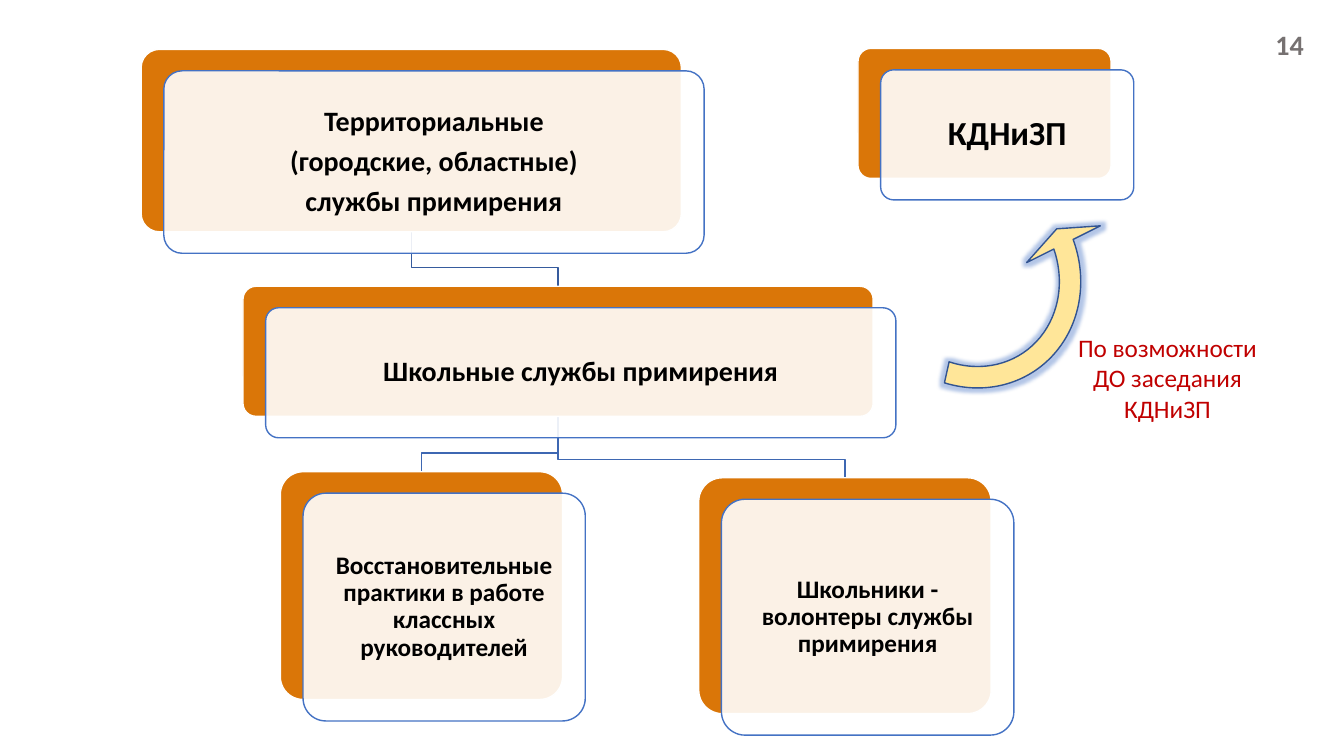
from dataclasses import dataclass

from lxml import etree
from pptx import Presentation
from pptx import util as u
from pptx.dml.color import RGBColor
from pptx.enum import shapes, text
from pptx.oxml.ns import qn


@dataclass(frozen=True)
class Theme:
    """Colours, font and type sizes of the slide."""
    font: str = "Calibri"
    orange: str = "DA7608"
    white: str = "FFFFFF"
    outline: str = "4472C4"
    branch_upper: str = "365B9D"
    branch_lower: str = "3E67B2"
    arrow: str = "FFE699"
    arrow_line: str = "325491"
    black: str = "000000"
    grey: str = "767171"
    red: str = "C00000"
    small: int = 18
    medium: int = 20
    large: int = 24


@dataclass(frozen=True)
class Box:
    """A rectangle in percent of the slide's width and height."""
    x: float
    y: float
    w: float
    h: float

    def shifted(self, dx, dy):
        """Return the box moved by the given shares."""
        return Box(self.x + dx, self.y + dy, self.w, self.h)

    def emu(self):
        """Return left, top, width and height as lengths."""
        return across(self.x), down(self.y), across(self.w), down(self.h)


THEME = Theme()
SLIDE_W, SLIDE_H = u.Inches(13.33), u.Inches(7.5)
CARD_SHIFT = (1.69, 2.84)
ELBOW_RISE = 2.45

TERRITORIAL = Box(10.5, 6.53, 40.2, 24.13)
SCHOOL = Box(18.08, 37.87, 46.89, 17.2)
PUPILS = Box(51.99, 63.2, 21.76, 31.2)
TEACHERS = Box(20.86, 62.4, 21, 30.13)
COMMISSION = Box(63.84, 6.4, 18.83, 17.2)


def across(share):
    """Turn a percentage of the slide's width into a length."""
    return u.Emu(round(SLIDE_W * share / 100))


def down(share):
    """Turn a percentage of the slide's height into a length."""
    return u.Emu(round(SLIDE_H * share / 100))


def paint(sp, fill, line):
    """Give a shape a solid fill and a thin line without shadow."""
    sp.shadow.inherit = False
    sp.fill.solid()
    sp.fill.fore_color.rgb = RGBColor.from_string(fill)
    sp.line.color.rgb = RGBColor.from_string(line)
    sp.line.width = u.Pt(1)


def add_effect_color(parent, color, alpha):
    """Append a colour with the given opacity in percent."""
    clr = etree.SubElement(parent, qn("a:srgbClr"), val=color)
    etree.SubElement(clr, qn("a:alpha"), val=str(alpha * 1000))


def write(tf, lines, size, color, bold=False, align=text.PP_ALIGN.CENTER):
    """Write one paragraph per line and return the paragraphs."""
    tf.word_wrap = True
    for i, line in enumerate(lines):
        p = tf.paragraphs[0] if i == 0 else tf.add_paragraph()
        p.alignment = align
        r = p.add_run()
        r.text = line
        r.font.name = THEME.font
        r.font.size = u.Pt(size)
        r.font.bold = bold
        r.font.color.rgb = RGBColor.from_string(color)
    return tf.paragraphs


def add_card(slide, box, lines, size):
    """Draw an orange plate and the translucent text card in front of it."""
    plates = ((box, THEME.orange, THEME.white),
              (box.shifted(*CARD_SHIFT), THEME.white, THEME.outline))
    for place, fill, line in plates:
        sp = slide.shapes.add_shape(shapes.MSO_SHAPE.ROUNDED_RECTANGLE, *place.emu())
        sp.adjustments[0] = 0.1
        paint(sp, fill, line)
    clr = sp.fill._xPr.find(qn("a:solidFill"))[0]
    etree.SubElement(clr, qn("a:alpha"), val="90000")
    tf = sp.text_frame
    tf.vertical_anchor = text.MSO_ANCHOR.MIDDLE
    tf.margin_left = tf.margin_right = u.Inches(0.13)
    tf.margin_top = tf.margin_bottom = u.Inches(0.13)
    for p in write(tf, lines, size, THEME.black, bold=True):
        p.line_spacing = 0.9
        p.space_after = u.Pt(0.35 * size)


def add_branch(slide, parent, child, color):
    """Draw an elbow line from the foot of one plate to the top of another."""
    x1, y1 = parent.x + parent.w / 2, parent.y + parent.h
    x2, y2 = child.x + child.w / 2, child.y
    bend = y2 - ELBOW_RISE
    fb = slide.shapes.build_freeform(across(x1), down(y1))
    corners = ((x1, bend), (x2, bend), (x2, y2))
    fb.add_line_segments([(across(x), down(y)) for x, y in corners], close=False)
    sp = fb.convert_to_shape()
    paint(sp, color, color)
    sp.fill.background()


def add_hierarchy(slide):
    """Draw the branches and cards of the reconciliation services."""
    add_branch(slide, SCHOOL, TEACHERS, THEME.branch_lower)
    add_branch(slide, SCHOOL, PUPILS, THEME.branch_lower)
    add_branch(slide, TERRITORIAL, SCHOOL, THEME.branch_upper)
    cards = (
        (TERRITORIAL, ["Территориальные", "(городские, областные)",
                       "службы примирения"], THEME.medium),
        (SCHOOL, ["Школьные службы примирения"], THEME.medium),
        (PUPILS, ["Школьники - волонтеры службы примирения"], THEME.small),
        (TEACHERS, ["Восстановительные практики в работе классных руководителей"],
         THEME.small),
        (COMMISSION, ["КДНиЗП"], THEME.large),
    )
    for card in cards:
        add_card(slide, *card)


def add_turn_arrow(slide, box):
    """Draw the glowing curved arrow that leads to the commission."""
    sp = slide.shapes.add_shape(shapes.MSO_SHAPE.CIRCULAR_ARROW, *box.emu())
    for i, value in enumerate((0.077, 5.876, 205.529, 133.95, 0.148)):
        sp.adjustments[i] = value
    sp.rotation = 145.8
    paint(sp, THEME.arrow, THEME.arrow_line)
    spPr = sp._element.spPr
    spPr.find(qn("a:xfrm")).set("flipH", "1")
    effects = spPr.find(qn("a:effectLst"))
    glow = etree.SubElement(effects, qn("a:glow"), rad=str(u.Pt(5)))
    add_effect_color(glow, THEME.outline, 40)


def add_label(slide, box, line, size, color, **style):
    """Place a plain text box."""
    tf = slide.shapes.add_textbox(*box.emu()).text_frame
    write(tf, [line], size, color, **style)
    return tf


def main():
    """Build and save the slide."""
    prs = Presentation()
    prs.slide_width, prs.slide_height = SLIDE_W, SLIDE_H
    slide = prs.slides.add_slide(prs.slide_layouts[6])
    add_hierarchy(slide)
    number = add_label(slide, Box(92.12, 3.2, 5.63, 5.33), "14", THEME.medium,
                       THEME.grey, bold=True, align=text.PP_ALIGN.RIGHT)
    number.vertical_anchor = text.MSO_ANCHOR.MIDDLE
    add_turn_arrow(slide, Box(61.74, 16.4, 20.71, 39.33))
    add_label(slide, Box(78.47, 43.33, 16.8, 13.47),
              "По возможности ДО заседания КДНиЗП", THEME.small, THEME.red)
    prs.save("out.pptx")


if __name__ == "__main__":
    main()
